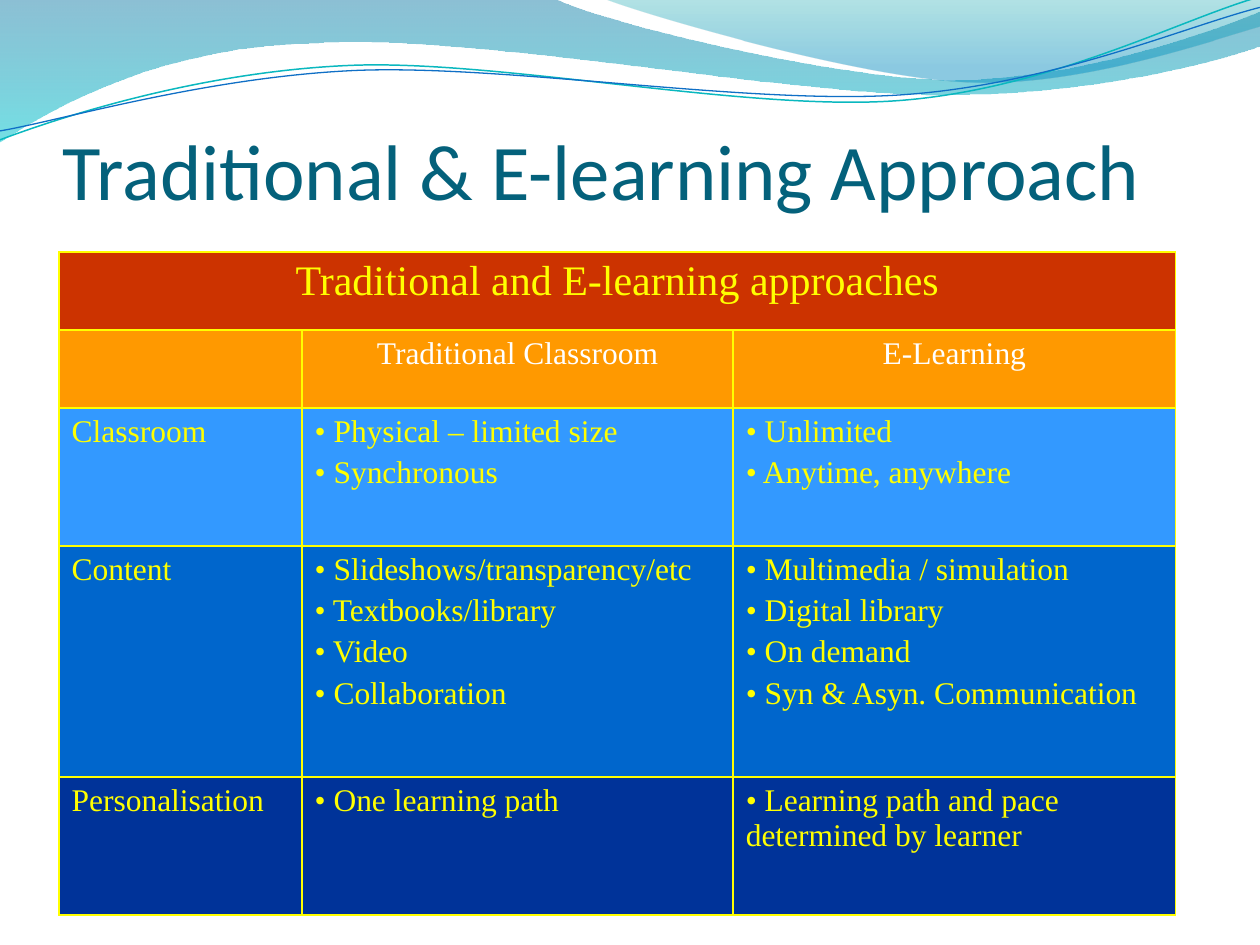
"""Build the slide comparing traditional and e-learning approaches."""
from lxml import etree
from pptx import Presentation
from pptx.dml.color import RGBColor
from pptx.enum.text import MSO_ANCHOR, PP_ALIGN
from pptx.oxml.ns import qn
from pptx.util import Cm, Pt

BOTTOM, CENTER, LEFT = MSO_ANCHOR.BOTTOM, PP_ALIGN.CENTER, PP_ALIGN.LEFT
WHITE = RGBColor(0xFF, 0xFF, 0xFF)
YELLOW = RGBColor(0xFF, 0xFF, 0x00)
RED = RGBColor(0xCC, 0x33, 0x00)
ORANGE = RGBColor(0xFF, 0x99, 0x00)
SKY = RGBColor(0x33, 0x99, 0xFF)
BLUE = RGBColor(0x00, 0x66, 0xCC)
NAVY = RGBColor(0x00, 0x33, 0x99)
TITLE_TEAL = RGBColor(0x04, 0x61, 0x7B)
DEEP_BLUE = RGBColor(0x00, 0x74, 0xA1)
CYAN = RGBColor(0x00, 0xC6, 0xCF)
TEAL = RGBColor(0x00, 0xA1, 0xA9)
OCEAN = RGBColor(0x00, 0x8B, 0xBF)
LINE_TEAL = RGBColor(0x0A, 0xB8, 0xBF)
LINE_BLUE = RGBColor(0x0F, 0x6F, 0xC6)
TABLE_FONT = "Times New Roman"

BACK_WAVE = [
    (0, 0), (11.18, -0.03),
    (12.09, 0.43, 16.87, 1.6, 19.25, 1.6), (21.67, 1.6, 24.33, 0.66, 25.4, 0.23),
    (25.43, 0.91),
    (24.97, 1.12, 22.1, 1.93, 18.95, 1.91), (15.8, 1.91, 9.7, 0.71, 6.53, 0.86),
    (3.25, 0.91, 1.17, 2.11, -0.03, 2.87), (0, 0),
]
FRONT_WAVE = [
    (12.17, -0.03), (12.93, 0.28, 17.32, 1.57, 19.53, 1.65),
    (21.74, 1.75, 24.41, 0.81, 25.4, 0.53), (25.4, 0), (12.17, -0.03),
]
TEAL_LINE = [
    (0, 2.82), (1.22, 2.36, 4.01, 1.45, 7.04, 1.32),
    (10.03, 1.19, 15.06, 2.26, 18.11, 2.03), (21.16, 1.8, 23.83, 0.38, 25.35, -0.05),
]
BLUE_LINE = [
    (0, 2.64), (1.19, 2.44, 4.17, 1.55, 7.19, 1.42),
    (10.24, 1.3, 15.16, 2.13, 18.21, 1.91), (21.23, 1.7, 23.9, 0.53, 25.4, 0.15),
]

COLUMN_WIDTHS = [4.9, 8.69, 8.92]
ROW_HEIGHTS = [1.57, 1.57, 2.79, 4.65, 2.79]
TOPICS = [
    ("Classroom", SKY,
     ["Physical – limited size", "Synchronous"],
     ["Unlimited", "Anytime, anywhere"]),
    ("Content", BLUE,
     ["Slideshows/transparency/etc", "Textbooks/library", "Video", "Collaboration"],
     ["Multimedia / simulation", "Digital library", "On demand",
      "Syn & Asyn. Communication"]),
    ("Personalisation", NAVY,
     ["One learning path"],
     ["Learning path and pace determined by learner"]),
]


def add_outline(slide, segments, close):
    """Add a freeform whose six-number segments are cubic curves."""
    ends = [(Cm(seg[-2]), Cm(seg[-1])) for seg in segments]
    builder = slide.shapes.build_freeform(*ends[0])
    builder.add_line_segments(ends[1:], close=close)
    s = builder.convert_to_shape()
    s.shadow.inherit = False
    lines = list(s._element.spPr.iter(qn("a:lnTo")))
    for line, seg in zip(lines, segments[1:]):
        if len(seg) == 6:
            line.tag = qn("a:cubicBezTo")
            for i, (x, y) in enumerate((seg[:2], seg[2:4])):
                control = etree.Element(
                    qn("a:pt"), x=str(Cm(x) - s.left), y=str(Cm(y) - s.top))
                line.insert(i, control)
    return s


def add_wave(slide, segments, stops):
    """Add a closed wave with a translucent downward gradient."""
    s = add_outline(slide, segments, True)
    s.line.fill.background()
    s.fill.gradient()
    s.fill.gradient_angle = 270
    for stop, (position, color, _) in zip(s.fill.gradient_stops, stops):
        stop.position = position
        stop.color.rgb = color
    for clr, (_, _, opacity) in zip(s._element.spPr.iter(qn("a:srgbClr")), stops):
        etree.SubElement(clr, qn("a:alpha"), val=str(opacity * 1000))


def add_wave_line(slide, segments, color, width):
    """Add an open curved line."""
    s = add_outline(slide, segments, False)
    s.fill.background()
    s.line.color.rgb = color
    s.line.width = Pt(width)


def add_title(slide, text):
    """Add the slide title."""
    tf = slide.shapes.add_textbox(Cm(1.27), Cm(1.96), Cm(23.06), Cm(2.41)).text_frame
    tf.word_wrap = True
    tf.vertical_anchor = BOTTOM
    tf.margin_left = tf.margin_right = tf.margin_bottom = 0
    p = tf.paragraphs[0]
    p.text = text
    p.font.name = "Calibri"
    p.font.size = Pt(45)
    p.font.color.rgb = TITLE_TEAL


def style_cell(cell, fill):
    """Give a cell yellow borders and a solid fill."""
    tc_pr = cell._tc.get_or_add_tcPr()
    for side in ("lnL", "lnR", "lnT", "lnB"):
        ln = etree.SubElement(tc_pr, qn(f"a:{side}"), w=str(Pt(1)))
        solid = etree.SubElement(ln, qn("a:solidFill"))
        etree.SubElement(solid, qn("a:srgbClr"), val=str(YELLOW))
    cell.fill.solid()
    cell.fill.fore_color.rgb = fill


def write_cell(cell, lines, color=YELLOW, size=18, align=LEFT, bullet=False):
    """Write one paragraph per line into a cell."""
    tf = cell.text_frame
    for i, line in enumerate(lines):
        p = tf.add_paragraph() if i else tf.paragraphs[0]
        p.text = f" {line}" if bullet else line
        p.alignment = align
        if i:
            p.space_before = Pt(3.6)
        if bullet:
            p_pr = p._p.get_or_add_pPr()
            etree.SubElement(p_pr, qn("a:buFont"), typeface=TABLE_FONT)
            etree.SubElement(p_pr, qn("a:buChar"), char="•")
        p.font.name = TABLE_FONT
        p.font.size = Pt(size)
        p.font.color.rgb = color


def add_comparison_table(slide):
    """Add the table of both approaches."""
    table = slide.shapes.add_table(
        len(ROW_HEIGHTS), len(COLUMN_WIDTHS), Cm(1.19), Cm(5.08),
        Cm(sum(COLUMN_WIDTHS)), Cm(sum(ROW_HEIGHTS))).table
    table.first_row = table.horz_banding = False
    for column, width in zip(table.columns, COLUMN_WIDTHS):
        column.width = Cm(width)
    row_fills = [RED, ORANGE] + [topic[1] for topic in TOPICS]
    for row, height, fill in zip(table.rows, ROW_HEIGHTS, row_fills):
        row.height = Cm(height)
        for cell in row.cells:
            style_cell(cell, fill)
    table.cell(0, 0).merge(table.cell(0, 2))
    write_cell(table.cell(0, 0), ["Traditional and E-learning approaches"],
               size=24, align=CENTER)
    for col, heading in enumerate(["Traditional Classroom", "E-Learning"], 1):
        write_cell(table.cell(1, col), [heading], WHITE, align=CENTER)
    for row, (topic, _, *approaches) in enumerate(TOPICS, 2):
        write_cell(table.cell(row, 0), [topic])
        for col, lines in enumerate(approaches, 1):
            write_cell(table.cell(row, col), lines, bullet=True)


def main():
    """Build and save the slide."""
    prs = Presentation()
    prs.slide_width, prs.slide_height = Cm(25.4), Cm(19.05)
    slide = prs.slides.add_slide(prs.slide_layouts[6])
    add_wave(slide, BACK_WAVE, [(0, DEEP_BLUE, 45), (1, CYAN, 55)])
    add_wave(slide, FRONT_WAVE, [(0, TEAL, 30), (0.8, OCEAN, 45)])
    add_wave_line(slide, TEAL_LINE, LINE_TEAL, 0.85)
    add_wave_line(slide, BLUE_LINE, LINE_BLUE, 0.75)
    add_title(slide, "Traditional & E-learning Approach")
    add_comparison_table(slide)
    prs.save("out.pptx")


if __name__ == "__main__":
    main()
